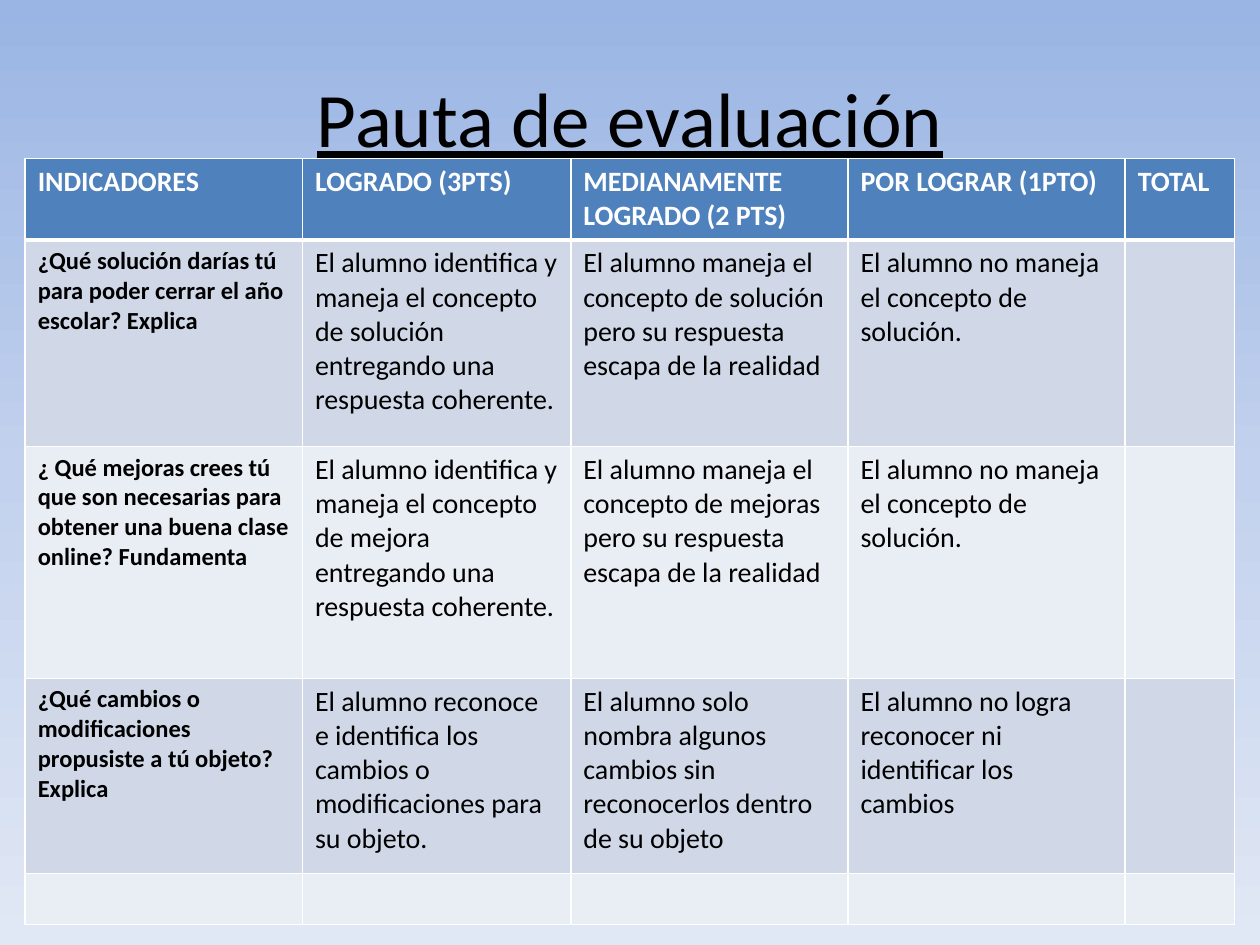
import copy
from dataclasses import dataclass

import lxml.etree
import pptx
import pptx.dml.color
import pptx.enum.text
import pptx.oxml.ns
import pptx.util

Inches, Pt = pptx.util.Inches, pptx.util.Pt
RGB = pptx.dml.color.RGBColor.from_string
qn = pptx.oxml.ns.qn


@dataclass(frozen=True)
class Theme:
    font: str = "Calibri"
    text: str = "000000"
    white: str = "FFFFFF"
    header: str = "4F81BD"
    bands: tuple = ("D0D8E8", "E9EDF4")
    sky: tuple = ((0, "9AB5E4"), (0.5, "C2D1ED"), (1, "E1E8F5"))
    title_size: int = 44
    cell_size: int = 16
    indicator_size: int = 14


COLUMN_WIDTHS = (2.2, 2.13, 2.2, 2.2, 0.87)
ROW_HEIGHTS = (0.61, 1.64, 1.84, 1.55, 0.39)
RUBRIC = (
    ("INDICADORES", "LOGRADO (3PTS)", "MEDIANAMENTE LOGRADO (2 PTS)",
     "POR LOGRAR (1PTO)", "TOTAL"),
    ("¿Qué solución darías tú para poder cerrar el año escolar? Explica",
     "El alumno identifica y maneja el concepto de solución entregando una "
     "respuesta coherente.",
     "El alumno maneja el concepto de solución pero su respuesta escapa de la realidad",
     "El alumno no maneja el concepto de solución.", ""),
    ("¿ Qué mejoras crees tú que son necesarias para obtener una buena clase "
     "online? Fundamenta",
     "El alumno identifica y maneja el concepto de mejora entregando una "
     "respuesta coherente.",
     "El alumno maneja el concepto de mejoras pero su respuesta escapa de la realidad",
     "El alumno no maneja el concepto de solución.", ""),
    ("¿Qué cambios o modificaciones propusiste a tú objeto? Explica",
     "El alumno reconoce e identifica los cambios o modificaciones para su objeto.",
     "El alumno solo nombra algunos cambios sin reconocerlos dentro de su objeto",
     "El alumno no logra reconocer ni identificar los cambios", ""),
    ("",) * 5,
)


def write_text(tf, text, *, font, size, color, bold=False, underline=False, align=None):
    p = tf.paragraphs[0]
    p.alignment = align
    r = p.add_run()
    r.text = text
    r.font.name, r.font.size = font, Pt(size)
    r.font.bold, r.font.underline = bold, underline
    r.font.color.rgb = RGB(color)


class SlideBuilder:
    def __init__(self, s, theme):
        self.s, self.theme = s, theme

    def background(self):
        fill = self.s.background.fill
        fill.gradient()
        fill.gradient_angle = 270
        # The default gradient has two stops; add the third
        stops = next(self.s.element.iter(qn("a:gsLst")))
        stops.append(copy.deepcopy(stops[-1]))
        for stop, (position, color) in zip(fill.gradient_stops, self.theme.sky):
            stop.position = position
            stop.color.rgb = RGB(color)

    def title(self, text, left, top, width, height):
        sp = self.s.shapes.title
        sp.left, sp.top = Inches(left), Inches(top)
        sp.width, sp.height = Inches(width), Inches(height)
        tf = sp.text_frame
        tf.vertical_anchor = pptx.enum.text.MSO_ANCHOR.MIDDLE
        write_text(tf, text, font=self.theme.font, size=self.theme.title_size,
                   color=self.theme.text, underline=True,
                   align=pptx.enum.text.PP_ALIGN.CENTER)

    def borders(self, cell, **widths):
        # Border lines come before the fill in the cell properties
        tc_pr = cell._tc.get_or_add_tcPr()
        for i, (side, width) in enumerate(widths.items()):
            ln = lxml.etree.Element(qn(f"a:ln{side}"), w=str(Pt(width)))
            solid = lxml.etree.SubElement(ln, qn("a:solidFill"))
            lxml.etree.SubElement(solid, qn("a:srgbClr"), val=self.theme.white)
            tc_pr.insert(i, ln)

    def table(self, rows, left, top, widths, heights):
        th = self.theme
        table = self.s.shapes.add_table(
            len(rows), len(widths), Inches(left), Inches(top),
            Inches(sum(widths)), Inches(sum(heights))).table
        for column, width in zip(table.columns, widths):
            column.width = Inches(width)
        for i, (row, height) in enumerate(zip(rows, heights)):
            table.rows[i].height = Inches(height)
            header = i == 0
            for j, text in enumerate(row):
                cell = table.cell(i, j)
                cell.fill.solid()
                cell.fill.fore_color.rgb = RGB(
                    th.header if header else th.bands[(i - 1) % 2])
                self.borders(cell, L=1, R=1, T=3 if i == 1 else 1, B=3 if header else 1)
                if text:
                    indicator = j == 0 and not header
                    write_text(cell.text_frame, text, font=th.font,
                               size=th.indicator_size if indicator else th.cell_size,
                               color=th.white if header else th.text,
                               bold=header or indicator)


def main():
    prs = pptx.Presentation()
    prs.slide_width, prs.slide_height = Inches(10), Inches(7.5)
    title_only = prs.slide_layouts[5]
    builder = SlideBuilder(prs.slides.add_slide(title_only), Theme())

    # Backdrop and heading
    builder.background()
    builder.title("Pauta de evaluación", 0.5, 0.3, 9, 1.25)

    # Evaluation rubric
    builder.table(RUBRIC, 0.2, 1.26, COLUMN_WIDTHS, ROW_HEIGHTS)

    prs.save("out.pptx")


if __name__ == "__main__":
    main()
